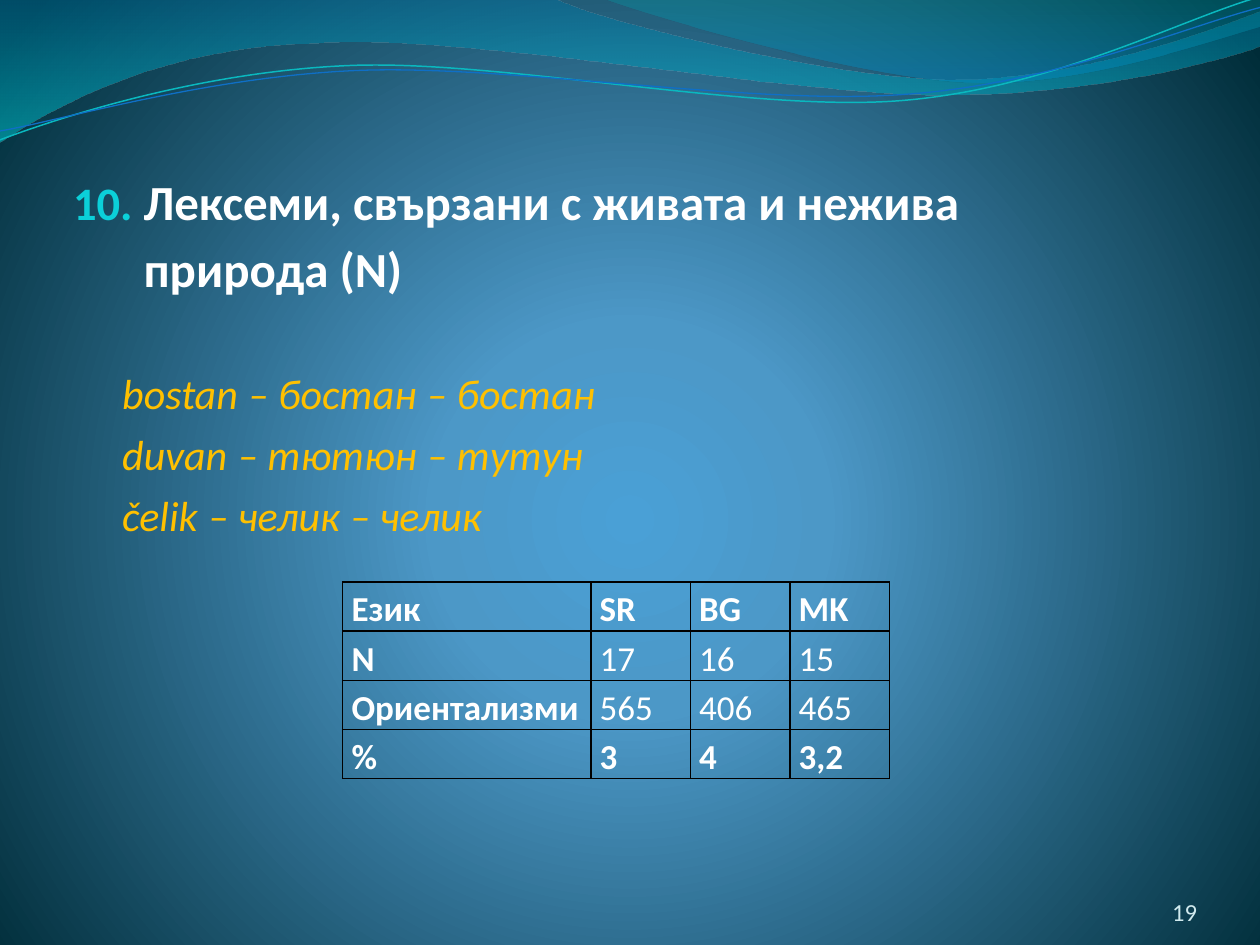
import math

import pptx
import pptx.dml.color
import pptx.enum.text
import pptx.oxml
import pptx.oxml.ns
import pptx.util
from pptx.util import Inches


def color(hex_string):
    return pptx.dml.color.RGBColor.from_string(hex_string)


def set_gradient(fill, element, stops, shade):
    """Give a fill the stops (position %, colour, opacity %) and a shade element."""
    fill.gradient()
    gradient = element.find(".//" + pptx.oxml.ns.qn("a:gradFill"))
    stop_xml = "".join(
        f'<a:gs pos="{position * 1000}"><a:srgbClr val="{hex_string}">'
        f'<a:alpha val="{opacity * 1000}"/></a:srgbClr></a:gs>'
        for position, hex_string, opacity in stops)
    namespace = pptx.oxml.ns.nsdecls("a")
    gradient[:] = list(pptx.oxml.parse_xml(
        f"<a:gradFill {namespace}><a:gsLst>{stop_xml}</a:gsLst>{shade}</a:gradFill>"))


presentation = pptx.Presentation()
presentation.slide_width = Inches(10)
presentation.slide_height = Inches(7.5)
slide = presentation.slides.add_slide(presentation.slide_layouts[6])
namespace = pptx.oxml.ns.nsdecls("a")

# Background: radial glow
set_gradient(
    slide.background.fill, slide.element,
    [(0, "4AA0D6", 100), (25, "4C98C7", 100), (100, "002C38", 100)],
    '<a:path path="circle">'
    '<a:fillToRect l="10000" t="110000" r="10000" b="100000"/></a:path>')

# Waves: points in inches; one point is a straight line, three are a Bezier curve.
# Then come gradient stops, or line colour and width with the centre of the tilt.
waves = [
    ((0, 0), [
        [(4.4, -0.01)],
        [(4.76, 0.17), (6.64, 0.63), (7.58, 0.63)],
        [(8.53, 0.63), (9.58, 0.26), (10, 0.09)],
        [(10.01, 0.36)],
        [(9.83, 0.44), (8.7, 0.76), (7.46, 0.75)],
        [(6.22, 0.75), (3.82, 0.28), (2.57, 0.34)],
        [(1.29, 0.36), (0.46, 0.83), (-0.01, 1.13)],
        [(0, 0)],
    ], [(0, "0074A1", 45), (100, "00C6CF", 55)], None),
    ((4.79, -0.01), [
        [(5.09, 0.11), (6.82, 0.62), (7.69, 0.65)],
        [(8.56, 0.69), (9.61, 0.32), (10, 0.21)],
        [(10, 0)],
        [(4.79, -0.01)],
    ], [(0, "00A1A9", 30), (80, "008BBF", 45)], None),
    ((0, 1.11), [
        [(0.48, 0.93), (1.58, 0.57), (2.77, 0.52)],
        [(3.95, 0.47), (5.93, 0.89), (7.13, 0.8)],
        [(8.33, 0.71), (9.38, 0.15), (9.98, -0.02)],
    ], None, ("0AB8BF", 0.85, 4.99, 0.58)),
    ((0, 1.04), [
        [(0.47, 0.96), (1.64, 0.61), (2.83, 0.56)],
        [(4.03, 0.51), (5.97, 0.84), (7.17, 0.75)],
        [(8.36, 0.67), (9.41, 0.21), (10, 0.06)],
    ], None, ("0F6FC6", 0.75, 5, 0.59)),
]
tilt = 2.7
sine, cosine = math.sin(math.radians(tilt)), math.cos(math.radians(tilt))
for start, segments, stops, line in waves:
    points = [start] + [point for segment in segments for point in segment]
    if line:
        center_x, center_y = line[2:]
        points = [(center_x + (x - center_x) * cosine - (y - center_y) * sine,
                   center_y + (x - center_x) * sine + (y - center_y) * cosine)
                  for x, y in points]
    vertices = [(Inches(x), Inches(y)) for x, y in points]
    builder = slide.shapes.build_freeform(*vertices[0], scale=1.0)
    builder.add_line_segments(vertices[1:], close=stops is not None)
    wave = builder.convert_to_shape()
    wave.shadow.inherit = False

    # Merge each group of three points into one curve
    steps = iter(wave.element.findall(".//" + pptx.oxml.ns.qn("a:lnTo")))
    for segment in segments:
        group = [next(steps) for point in segment]
        if len(group) == 3:
            curve = pptx.oxml.parse_xml(f"<a:cubicBezTo {namespace}/>")
            group[0].addprevious(curve)
            for step in group:
                curve.append(step[0])
                step.getparent().remove(step)

    if stops:
        set_gradient(wave.fill, wave.element, stops, '<a:lin ang="5400000" scaled="0"/>')
        wave.line.fill.background()
    else:
        wave.rotation = 360 - tilt
        wave.fill.background()
        wave.line.color.rgb = color(line[0])
        wave.line.width = pptx.util.Pt(line[1])

# Heading and word examples: text, left margin, space before, size, colour, is heading
body = slide.shapes.add_textbox(Inches(0.58), Inches(1.31), Inches(8.91), Inches(5.75))
frame = body.text_frame
frame.word_wrap = True
frame.margin_left, frame.margin_right = 0, Inches(0.02)
lines = [
    ("Лексеми, свързани с живата и нежива", 0.56, 4, 28, "FFFFFF", True),
    ("природа (N)", 0.56, 5, 28, "FFFFFF", True),
    ("bostan ‒ бостан ‒ бостан", 0.39, 40, 24, "FFC000", False),
    ("duvan ‒ тютюн ‒ тутун", 0.39, 6, 24, "FFC000", False),
    ("čelik ‒ челик ‒ челик", 0.39, 6, 24, "FFC000", False),
]
frame.text = "\n".join(line[0] for line in lines)
for paragraph, (text, margin, before, size, hex_string, heading) in zip(frame.paragraphs, lines):
    paragraph.space_before = pptx.util.Pt(before)
    paragraph._p.get_or_add_pPr().set("marL", str(Inches(margin)))
    font = paragraph.runs[0].font
    font.name = "Calibri"
    font.size = pptx.util.Pt(size)
    font.bold = heading
    font.italic = not heading
    font.color.rgb = color(hex_string)

# Automatic number on the first line
properties = frame.paragraphs[0]._p.get_or_add_pPr()
properties.set("indent", str(-Inches(0.56)))
for bullet in (f'<a:buClr {namespace}><a:srgbClr val="0BD0D9"/></a:buClr>',
               f'<a:buSzPct {namespace} val="95000"/>',
               f'<a:buFont {namespace} typeface="+mj-lt"/>',
               f'<a:buAutoNum {namespace} type="arabicPeriod" startAt="10"/>'):
    properties.append(pptx.oxml.parse_xml(bullet))

# Slide number
number = slide.shapes.add_textbox(Inches(8.67), Inches(6.95), Inches(0.83), Inches(0.4))
frame = number.text_frame
frame.word_wrap = True
frame.margin_left = frame.margin_right = frame.margin_top = frame.margin_bottom = 0
frame.vertical_anchor = pptx.enum.text.MSO_ANCHOR.BOTTOM
frame.text = "19"
frame.paragraphs[0].alignment = pptx.enum.text.PP_ALIGN.RIGHT
font = frame.paragraphs[0].runs[0].font
font.name = "Calibri"
font.size = pptx.util.Pt(14)
font.color.rgb = color("D1EAEE")

# Table of loanword shares by language
rows = [
    ("Език", "SR", "BG", "MK"),
    ("N", "17", "16", "15"),
    ("Ориентализми", "565", "406", "465"),
    ("%", "3", "4", "3,2"),
]
table = slide.shapes.add_table(
    4, 4, Inches(2.72), Inches(4.62), Inches(4.34), Inches(1.56)).table
table.first_row = table.horz_banding = False
for column, width in zip(table.columns, (1.97, 0.79, 0.79, 0.79)):
    column.width = Inches(width)
for row_index, row in enumerate(rows):
    for column_index, value in enumerate(row):
        cell = table.cell(row_index, column_index)
        cell.margin_left = cell.margin_right = Inches(0.07)
        cell.margin_top = cell.margin_bottom = 0
        cell.text_frame.text = value
        paragraph = cell.text_frame.paragraphs[0]
        paragraph.line_spacing = 1.15
        font = paragraph.runs[0].font
        font.name = "Calibri"
        font.size = pptx.util.Pt(20)
        font.bold = column_index == 0 or row_index in (0, 3)
        font.color.rgb = color("FFFFFF")
        cell.fill.background()
        cell_properties = cell._tc.get_or_add_tcPr()
        for position, side in enumerate(("lnL", "lnR", "lnT", "lnB")):
            cell_properties.insert(position, pptx.oxml.parse_xml(
                f'<a:{side} {namespace} w="12700"><a:solidFill>'
                f'<a:srgbClr val="000000"/></a:solidFill></a:{side}>'))

presentation.save("out.pptx")
